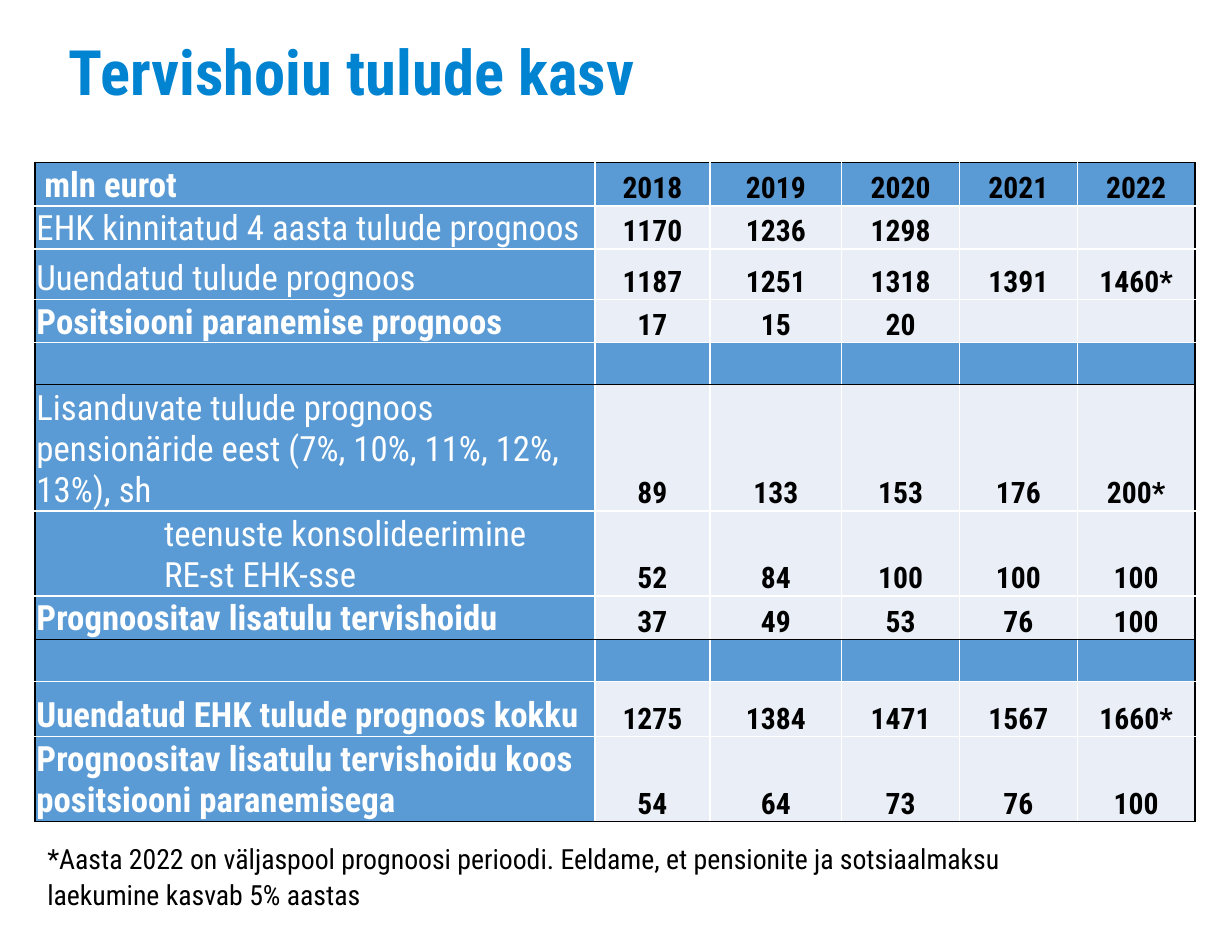
from lxml import etree
from pptx import Presentation
from pptx.dml.color import RGBColor
from pptx.enum import text
from pptx.oxml.ns import qn
from pptx.util import Cm, Pt

FONT = "Roboto Condensed"
BLACK = RGBColor(0x00, 0x00, 0x00)
WHITE = RGBColor(0xFF, 0xFF, 0xFF)
TITLE_BLUE = RGBColor(0x00, 0x84, 0xD1)
LABEL_BLUE = RGBColor(0x5B, 0x9B, 0xD5)
VALUE_GREY = RGBColor(0xEA, 0xEF, 0xF7)

COL_WIDTHS = [11.36, 2.34, 2.67, 2.39, 2.39, 2.39]
# Row height, bold label, label, values by year
ROWS = [
    (0.86, True, "mln eurot", ["2018", "2019", "2020", "2021", "2022"]),
    (0.85, False, "EHK kinnitatud 4 aasta tulude prognoos", ["1170", "1236", "1298"]),
    (1.02, False, "Uuendatud tulude prognoos", ["1187", "1251", "1318", "1391", "1460*"]),
    (0.85, True, "Positsiooni paranemise prognoos", ["17", "15", "20"]),
    (0.85, False, "", []),
    (2.52, False, "Lisanduvate tulude prognoos pensionäride eest (7%, 10%, 11%, 12%, 13%), sh",
     ["89", "133", "153", "176", "200*"]),
    (1.7, False, "teenuste konsolideerimine\nRE-st EHK-sse", ["52", "84", "100", "100", "100"]),
    (0.86, True, "Prognoositav lisatulu tervishoidu", ["37", "49", "53", "76", "100"]),
    (0.85, False, "", []),
    (1.12, True, "Uuendatud EHK tulude prognoos kokku", ["1275", "1384", "1471", "1567", "1660*"]),
    (1.7, True, "Prognoositav lisatulu tervishoidu koos positsiooni paranemisega",
     ["54", "64", "73", "76", "100"]),
]
LABEL_INDENTS = {0: 0.19, 6: 2.62}
BLACK_RULES = {0, 5, 8, 11}  # row boundaries drawn in black


def set_all(obj, values):
    for name, value in values.items():
        setattr(obj, name, value)


def write(tf, content, size, color, bold=False, align=text.PP_ALIGN.LEFT, spacing=1.0):
    tf.text = content
    for p in tf.paragraphs:
        set_all(p, {"alignment": align, "line_spacing": spacing})
        for r in p.runs:
            set_all(r.font, {"name": FONT, "size": Pt(size), "bold": bold})
            r.font.color.rgb = color


def add_text(s, box, content, size, color, margins, **fmt):
    tf = s.shapes.add_textbox(*map(Cm, box)).text_frame
    tf.word_wrap = True
    set_all(tf, margins)
    write(tf, content, size, color, **fmt)


def set_borders(cell, colors):
    """Draw 1 pt cell borders; colors maps L, R, T and B to a colour."""
    tc_pr = cell._tc.get_or_add_tcPr()
    for side, color in colors.items():
        ln = etree.SubElement(tc_pr, qn(f"a:ln{side}"), w=str(Pt(1)))
        fill = etree.SubElement(ln, qn("a:solidFill"))
        etree.SubElement(fill, qn("a:srgbClr"), val=str(color))


def format_cell(cell, row, col, fill):
    set_all(cell, {
        "vertical_anchor": text.MSO_ANCHOR.BOTTOM,
        "margin_left": Cm(LABEL_INDENTS.get(row, 0.03) if col == 0 else 0.03),
        "margin_right": Cm(0.03), "margin_top": Cm(0.03), "margin_bottom": 0,
    })
    edges = {"L": col == 0, "R": col == len(COL_WIDTHS) - 1,
             "T": row in BLACK_RULES, "B": row + 1 in BLACK_RULES}
    set_borders(cell, {side: BLACK if dark else WHITE for side, dark in edges.items()})
    cell.fill.solid()
    cell.fill.fore_color.rgb = fill


def add_income_table(s):
    heights = [row[0] for row in ROWS]
    table = s.shapes.add_table(len(ROWS), len(COL_WIDTHS), Cm(0.71), Cm(3.3),
                               Cm(sum(COL_WIDTHS)), Cm(sum(heights))).table
    set_all(table, {"first_row": False, "horz_banding": False})
    for column, width in zip(table.columns, COL_WIDTHS):
        column.width = Cm(width)
    for i, (height, bold, label, values) in enumerate(ROWS):
        table.rows[i].height = Cm(height)
        for j in range(len(COL_WIDTHS)):
            is_value = i > 0 and j > 0 and label
            format_cell(table.cell(i, j), i, j, VALUE_GREY if is_value else LABEL_BLUE)
        if label:
            write(table.cell(i, 0).text_frame, label, 20, WHITE, bold)
        for j, value in enumerate(values, 1):
            write(table.cell(i, j).text_frame, value, 17, BLACK, True, text.PP_ALIGN.CENTER)


def main():
    prs = Presentation()
    set_all(prs, {"slide_width": Cm(25), "slide_height": Cm(19)})
    s = prs.slides.add_slide(prs.slide_layouts[6])
    add_text(s, (1.4, 0.71, 22, 3), "Tervishoiu tulude kasv", 36, TITLE_BLUE,
             {"margin_left": 0, "margin_top": Cm(0.15), "margin_right": 0, "margin_bottom": 0},
             bold=True, spacing=0.88)
    add_income_table(s)
    add_text(s, (0.71, 16.89, 21.18, 1.75),
             "*Aasta 2022 on väljaspool prognoosi perioodi. Eeldame, et pensionite ja "
             "sotsiaalmaksu laekumine kasvab 5% aastas", 16, BLACK, {}, spacing=1.1)
    prs.save("out.pptx")


if __name__ == "__main__":
    main()
